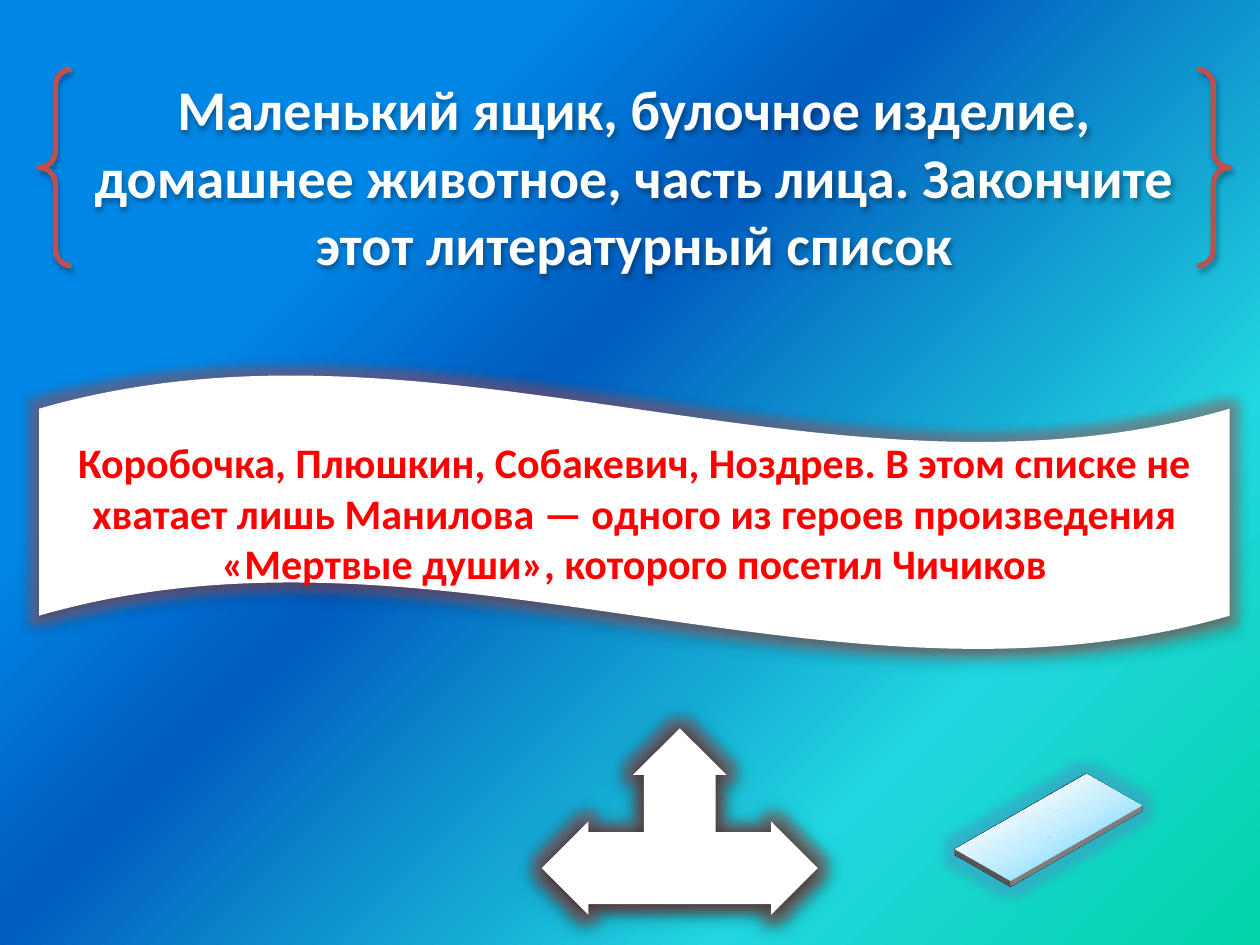
from dataclasses import dataclass
from typing import Optional

from lxml.etree import SubElement
from pptx import Presentation
from pptx.dml.color import RGBColor
from pptx.enum.shapes import MSO_SHAPE
from pptx.enum.text import MSO_ANCHOR, PP_ALIGN
from pptx.oxml import parse_xml
from pptx.oxml.ns import nsdecls, qn
from pptx.util import Inches, Pt


@dataclass
class Shadow:
    color: str
    alpha: int
    blur: float
    dist: float
    angle: int = 90


@dataclass
class Glow:
    color: str
    alpha: int
    radius: float


@dataclass
class Figure:
    kind: MSO_SHAPE
    box: tuple[float, float, float, float]
    shadow: Shadow
    fill: Optional[str] = None
    line: Optional[tuple[str, float]] = None
    glow: Optional[Glow] = None
    adjustments: tuple[float, ...] = ()


RED_GLOW = Glow("C0504D", 40, 11)
QUESTION = Figure(MSO_SHAPE.DOUBLE_BRACE, (0.31, 0.55, 9.45, 1.56),
                  Shadow("000000", 35, 3.1, 1.8), line=("C0504D", 3))
ANSWER = Figure(MSO_SHAPE.WAVE, (0.31, 2.97, 9.45, 2.19),
                Shadow("000000", 32, 3.5, 2.2), fill="FFFFFF", glow=RED_GLOW)
ARROWS = Figure(MSO_SHAPE.LEFT_RIGHT_UP_ARROW, (4.3, 5.78, 2.19, 1.48),
                Shadow("000000", 100, 8.5, 1), fill="FFFFFF", glow=RED_GLOW,
                adjustments=(0.386, 0.25, 0.25))
BUTTON = Figure(MSO_SHAPE.ACTION_BUTTON_RETURN, (7.58, 6.25, 1.48, 0.63),
                Shadow("000000", 43, 25, 0, 45), line=("FFFFFF", 2.75),
                glow=Glow("4F81BD", 40, 11))
BUTTON_STOPS = [(0, "A7E6FF"), (35, "C1EDFF"), (100, "E7F8FF")]
BACKGROUND_STOPS = [(0, "03D4A8"), (25, "21D6E0"), (58, "005CBF", 59), (75, "0087E6")]


def rgb(color: str) -> RGBColor:
    return RGBColor.from_string(color)


def add_color(parent, color: str, alpha: int = 100) -> None:
    c = SubElement(parent, qn("a:srgbClr"), val=color)
    if alpha < 100:
        SubElement(c, qn("a:alpha"), val=str(alpha * 1000))


def gradient(stops: list[tuple]):
    """Return a gradFill element that still lacks its direction."""
    grad = parse_xml(f'<a:gradFill {nsdecls("a")} rotWithShape="1"><a:gsLst/></a:gradFill>')
    for pos, *color in stops:
        add_color(SubElement(grad[0], qn("a:gs"), pos=str(pos * 1000)), *color)
    return grad


def add_effects(s, shadow: Shadow, glow: Optional[Glow]) -> None:
    effects = s._element.spPr.find(qn("a:effectLst"))
    if glow:
        g = SubElement(effects, qn("a:glow"), rad=str(Pt(glow.radius)))
        add_color(g, glow.color, glow.alpha)
    sh = SubElement(effects, qn("a:outerShdw"), blurRad=str(Pt(shadow.blur)),
                    dist=str(Pt(shadow.dist)), dir=str(shadow.angle * 60000),
                    rotWithShape="0")
    add_color(sh, shadow.color, shadow.alpha)


def add_figure(slide, f: Figure):
    s = slide.shapes.add_shape(f.kind, *map(Inches, f.box))
    s.shadow.inherit = False
    for i, value in enumerate(f.adjustments):
        s.adjustments[i] = value
    if f.fill:
        s.fill.solid()
        s.fill.fore_color.rgb = rgb(f.fill)
    else:
        s.fill.background()
    if f.line:
        s.line.color.rgb = rgb(f.line[0])
        s.line.width = Pt(f.line[1])
    else:
        s.line.fill.background()
    add_effects(s, f.shadow, f.glow)
    return s


def write(s, text: str, size: int, color: str) -> None:
    tf = s.text_frame
    tf.word_wrap = True
    tf.vertical_anchor = MSO_ANCHOR.MIDDLE
    p = tf.paragraphs[0]
    p.alignment = PP_ALIGN.CENTER
    r = p.add_run()
    r.text = text
    for name, value in {"size": Pt(size), "name": "Calibri", "bold": True}.items():
        setattr(r.font, name, value)
    r.font.color.rgb = rgb(color)


def set_background(slide) -> None:
    slide.background.fill.solid()
    bg = slide.background._cSld.bg.bgPr
    grad = gradient(BACKGROUND_STOPS)
    path = SubElement(grad, qn("a:path"), {"path": "circle"})
    SubElement(path, qn("a:fillToRect"), l="100000", t="100000")
    bg.replace(bg.find(qn("a:solidFill")), grad)


def style_button(s) -> None:
    """Give the button its gradient and lay it flat in space."""
    sp_pr = s._element.spPr
    grad = gradient(BUTTON_STOPS)
    SubElement(grad, qn("a:lin"), ang=str(270 * 60000), scaled="1")
    sp_pr.replace(sp_pr.find(qn("a:noFill")), grad)
    scene = SubElement(sp_pr, qn("a:scene3d"))
    SubElement(scene, qn("a:camera"), prst="isometricTopUp")
    SubElement(scene, qn("a:lightRig"), rig="threePt", dir="t")
    SubElement(sp_pr, qn("a:sp3d"), extrusionH=str(Pt(4)))


def main() -> None:
    prs = Presentation()
    prs.slide_width, prs.slide_height = Inches(10), Inches(7.5)
    slide = prs.slides.add_slide(prs.slide_layouts[6])
    set_background(slide)
    write(add_figure(slide, QUESTION),
          "Маленький ящик, булочное изделие, домашнее животное, часть лица. "
          "Закончите этот литературный список", 32, "FFFFFF")
    write(add_figure(slide, ANSWER),
          "Коробочка, Плюшкин, Собакевич, Ноздрев. В этом списке не хватает лишь "
          "Манилова — одного из героев произведения «Мертвые души», "
          "которого посетил Чичиков", 24, "FF0000")
    add_figure(slide, ARROWS)
    style_button(add_figure(slide, BUTTON))
    prs.save("out.pptx")


if __name__ == "__main__":
    main()
